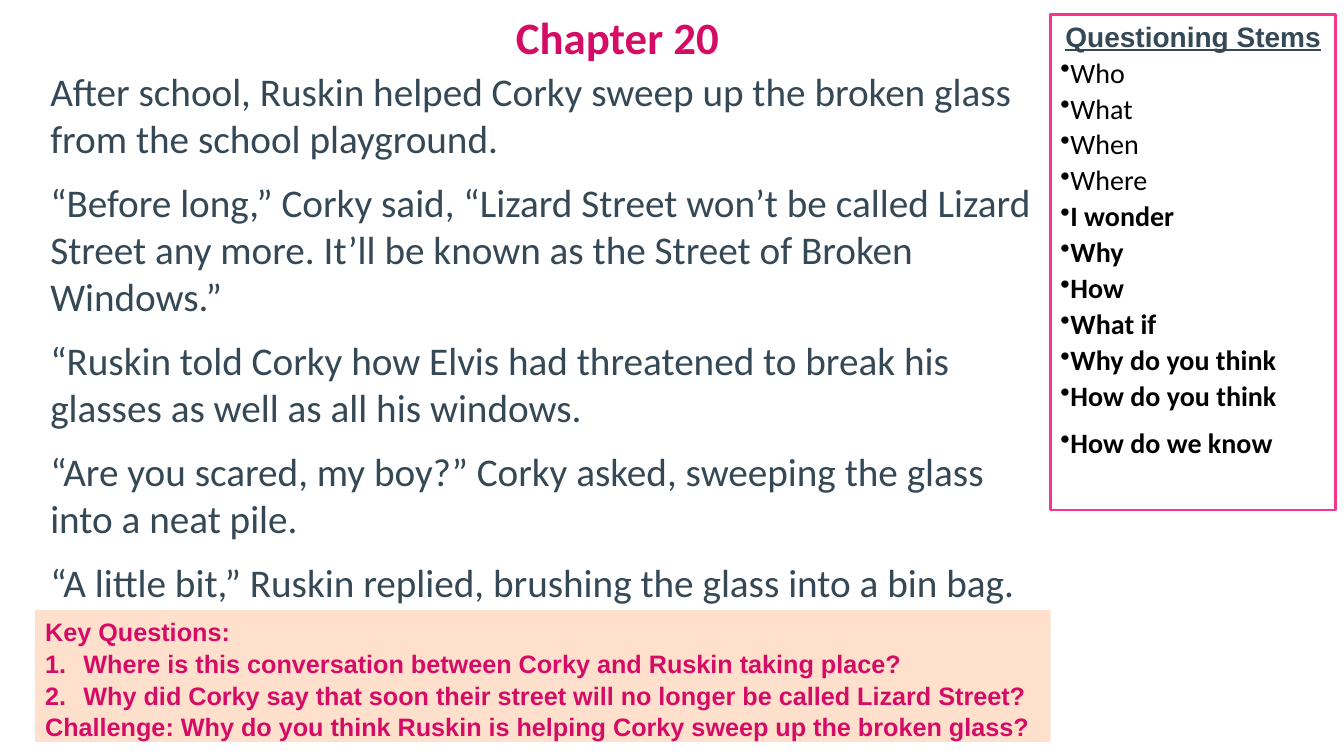
from dataclasses import dataclass

from lxml import etree
from pptx import Presentation
from pptx import util as u
from pptx.dml.color import RGBColor
from pptx.enum import shapes, text
from pptx.oxml.ns import qn


@dataclass(frozen=True)
class Theme:
    pink: str = "D50C66"
    edge: str = "F4378C"
    slate: str = "344855"
    black: str = "000000"
    peach: str = "FFE0CC"
    white: str = "FFFFFF"
    head: str = "Arial"
    body: str = "Calibri"
    title: int = 32
    story: int = 28
    stem: int = 20
    key: int = 18


T = Theme()
WIDE, HIGH = 13.33, 7.5
SPLIT = 10.42  # edge between the story column and the stems column
TOP = 0.62     # bottom of the title row

STORY = [
    "After school, Ruskin helped Corky sweep up the broken glass from the school playground.",
    "“Before long,” Corky said, “Lizard Street won’t be called Lizard Street any more. "
    "It’ll be known as the Street of Broken Windows.”",
    "“Ruskin told Corky how Elvis had threatened to break his glasses as well as all his windows.",
    "“Are you scared, my boy?” Corky asked, sweeping the glass into a neat pile.",
    "“A little bit,” Ruskin replied, brushing the glass into a bin bag.",
]
PLAIN = ["Who", "What", "When", "Where"]
DEEP = ["I wonder", "Why", "How", "What if", "Why do you think",
        "How do you think", "How do we know"]
ASK = [
    "Where is this conversation between Corky and Ruskin taking place?",
    "Why did Corky say that soon their street will no longer be called Lizard Street?",
]
DARE = "Challenge: Why do you think Ruskin is helping Corky sweep up the broken glass?"


def place(box):
    return [u.Inches(n) for n in box]


def style(par, size, face, tint, bold=False):
    font = par.font
    font.size, font.name, font.bold = u.Pt(size), face, bold
    font.color.rgb = RGBColor.from_string(tint)


def indent(par, left, first=0):
    props = par._p.get_or_add_pPr()
    props.set("marL", str(u.Inches(left)))
    props.set("indent", str(u.Inches(first)))
    return props


def mark(par, tag, left=0, first=0, **attrs):
    """Give a paragraph a bullet or a number."""
    etree.SubElement(indent(par, left, first), qn(tag), attrs)


def add(frame, words):
    """Write into the empty first paragraph, or append a new one."""
    par = frame.paragraphs[0]
    if par.runs:
        par = frame.add_paragraph()
    par.add_run().text = words
    return par


def setup(frame):
    frame.word_wrap = True
    frame.auto_size = text.MSO_AUTO_SIZE.NONE
    frame.vertical_anchor = text.MSO_ANCHOR.TOP
    return frame


def panel(slide, box, fill, edge=None):
    """Draw a filled rectangle and return its text frame."""
    shape = slide.shapes.add_shape(shapes.MSO_SHAPE.RECTANGLE, *place(box))
    shape.shadow.inherit = False
    shape.fill.solid()
    shape.fill.fore_color.rgb = RGBColor.from_string(fill)
    if edge:
        shape.line.color.rgb = RGBColor.from_string(edge)
        shape.line.width = u.Pt(2)
    else:
        shape.line.fill.background()
    return setup(shape.text_frame)


def title(slide, box, words):
    shape = slide.shapes.title
    shape.left, shape.top, shape.width, shape.height = place(box)
    par = add(setup(shape.text_frame), words)
    par.alignment = text.PP_ALIGN.CENTER
    style(par, T.title, T.body, T.pink, True)


def story(slide, box):
    frame = setup(slide.shapes.add_textbox(*place(box)).text_frame)
    for i, words in enumerate(STORY):
        par = add(frame, words)
        indent(par, 0.4)
        par.space_before = u.Pt(6 if i else 0)
        par.space_after = u.Pt(6)
        style(par, T.story, T.body, T.slate)


def stems(slide, box):
    frame = panel(slide, box, T.white, T.edge)
    par = add(frame, "Questioning Stems")
    par.alignment = text.PP_ALIGN.CENTER
    style(par, T.stem, T.head, T.slate, True)
    par.font.underline = True
    for words in PLAIN + DEEP:
        par = add(frame, words)
        mark(par, "a:buChar", char="•")
        par.alignment = text.PP_ALIGN.LEFT
        par.line_spacing = 1.07
        par.space_after = u.Pt(8 if words in DEEP[-2:] else 0)
        style(par, T.stem, T.body, T.black, words in DEEP)


def keys(slide, box):
    frame = panel(slide, box, T.peach)
    for words in ["Key Questions:", *ASK, DARE]:
        par = add(frame, words)
        if words in ASK:
            mark(par, "a:buAutoNum", 0.38, -0.38, type="arabicPeriod")
        par.alignment = text.PP_ALIGN.LEFT
        par.line_spacing = 1.05
        style(par, T.key, T.head, T.pink, True)


def main():
    deck = Presentation()
    deck.slide_width, deck.slide_height = u.Inches(WIDE), u.Inches(HIGH)
    slide = deck.slides.add_slide(deck.slide_layouts[5])

    # Questions and stems
    keys(slide, (0.35, 6.05, SPLIT - 0.35, 1.31))
    stems(slide, (SPLIT, 0.14, 2.83, 4.92))

    # Chapter heading and passage
    title(slide, (-0.54, 0.05, WIDE, TOP - 0.05), "Chapter 20")
    story(slide, (0, TOP, SPLIT, 5.06))

    deck.save("out.pptx")


if __name__ == "__main__":
    main()
